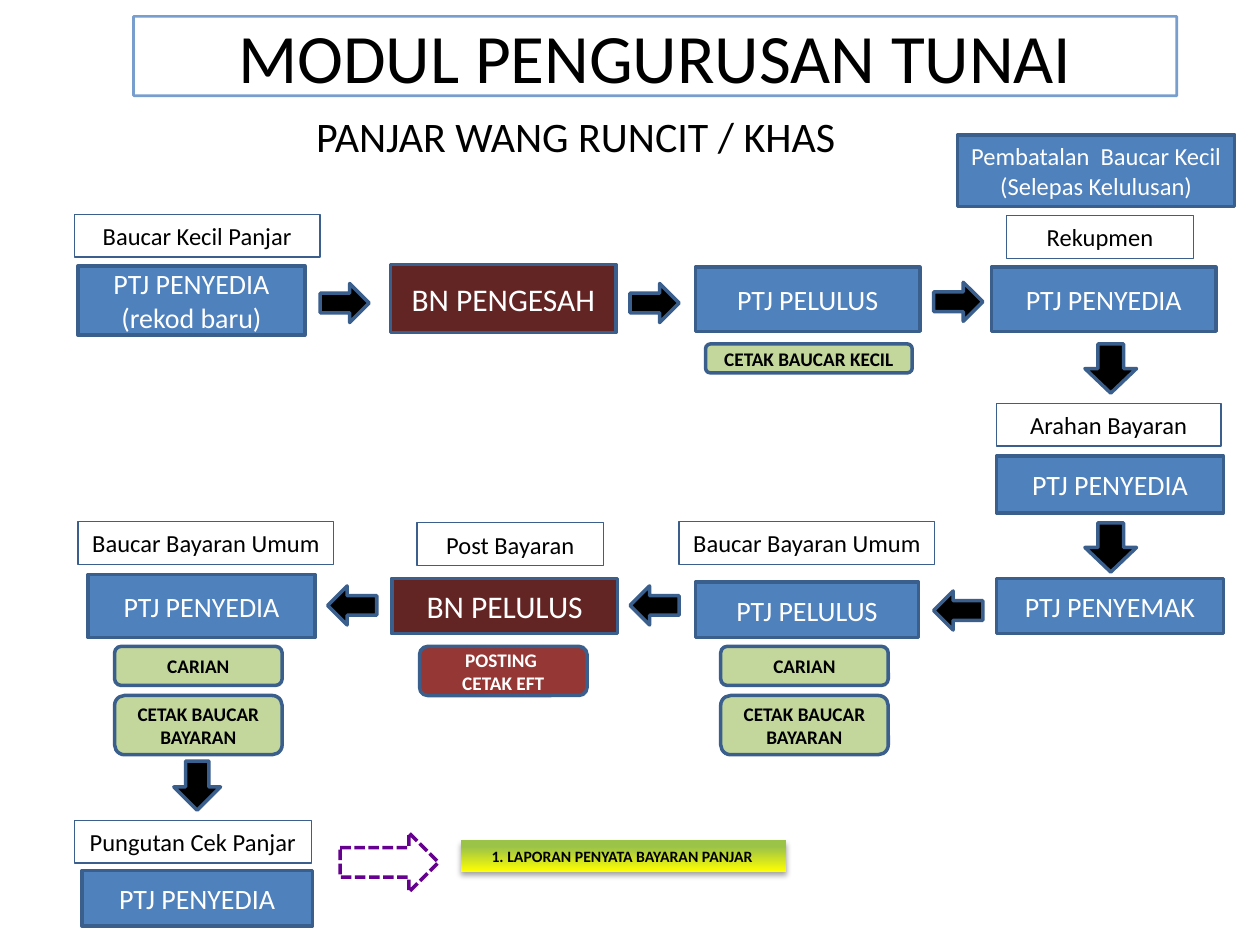
from lxml.etree import SubElement
from pptx import Presentation
from pptx.dml.color import RGBColor
from pptx.enum.dml import MSO_LINE
from pptx.enum.shapes import MSO_SHAPE
from pptx.enum.text import MSO_ANCHOR, MSO_AUTO_SIZE, PP_ALIGN
from pptx.oxml.ns import qn
from pptx.util import Inches, Pt

HUES = {
    "blue": "4F81BD", "edge": "3A5F8C", "wine": "632523", "red": "953735",
    "green": "C3D69B", "black": "000000", "white": "FFFFFF",
    "purple": "66008F", "yellow": "FFFF00", "lime": "9BC348",
}
# style: preset, fill, line width, text size, text colour, bold, wrap
STYLES = {
    "step": (MSO_SHAPE.RECTANGLE, "blue", 2, 16, "white", False, True),
    "bank": (MSO_SHAPE.RECTANGLE, "wine", 2, 18, "white", False, True),
    "cancel": (MSO_SHAPE.RECTANGLE, "blue", 2, 14, "white", False, True),
    "label": (MSO_SHAPE.RECTANGLE, None, 0.75, 14, "black", False, False),
    "task": (MSO_SHAPE.ROUNDED_RECTANGLE, "green", 2, 11, "black", True, True),
    "post": (MSO_SHAPE.ROUNDED_RECTANGLE, "red", 2, 11, "white", True, True),
    "arrow": (MSO_SHAPE.RIGHT_ARROW, "black", 2, 11, "white", False, True),
    "link": (MSO_SHAPE.RIGHT_ARROW, None, 2, 11, "black", False, True),
    "report": (MSO_SHAPE.RECTANGLE, "yellow", 0, 9, "black", True, False),
}


def hue(name):
    return RGBColor.from_string(HUES[name])


def write(shape, text, size, color, bold=False, wrap=True, align=PP_ALIGN.CENTER):
    frame = shape.text_frame
    frame.text = text
    frame.word_wrap = wrap
    frame.auto_size = MSO_AUTO_SIZE.NONE
    frame.vertical_anchor = MSO_ANCHOR.MIDDLE
    for para in frame.paragraphs:
        para.alignment = align
        para.space_before = Pt(0)
        for run in para.runs:
            run.font.name = "Calibri"
            run.font.size = Pt(size)
            run.font.bold = bold
            run.font.color.rgb = hue(color)


deck = Presentation()
deck.slide_width, deck.slide_height = Inches(10), Inches(7.5)
slide = deck.slides.add_slide(deck.slide_layouts[0])

# Title and subtitle
title, sub = slide.placeholders
for holder, box in ((title, (1.06, 0.13, 8.28, 0.63)), (sub, (2.41, 0.83, 4.36, 0.5))):
    holder.left, holder.top, holder.width, holder.height = map(Inches, box)
write(title, "MODUL PENGURUSAN TUNAI", 39.6, "black")
write(sub, "PANJAR WANG RUNCIT / KHAS", 24, "black", wrap=False, align=PP_ALIGN.LEFT)
title.line.color.rgb = hue("blue")
title.line.width = Pt(1.5)
tint = title.line.fill._xPr.find(".//" + qn("a:srgbClr"))
SubElement(tint, qn("a:alpha"), val="76000")

# Flow chart: style, text, left, top, width, height
parts = [
    ("cancel", "Pembatalan  Baucar Kecil (Selepas Kelulusan)", 7.6, 1.07, 2.2, 0.57),
    # Top row
    ("label", "Baucar Kecil Panjar", 0.59, 1.7, 1.95, 0.34),
    ("step", "PTJ PENYEDIA\n(rekod baru)", 0.62, 2.11, 1.8, 0.55),
    ("bank", "BN PENGESAH", 3.1, 2.1, 1.79, 0.54),
    ("step", "PTJ PELULUS", 5.52, 2.12, 1.78, 0.51),
    ("task", "CETAK BAUCAR KECIL", 5.6, 2.73, 1.64, 0.23),
    ("label", "Rekupmen", 7.99, 1.71, 1.48, 0.34),
    ("step", "PTJ PENYEDIA", 7.87, 2.12, 1.78, 0.51),
    # Right column
    ("label", "Arahan Bayaran", 7.91, 3.2, 1.78, 0.34),
    ("step", "PTJ PENYEDIA", 7.91, 3.62, 1.8, 0.45),
    ("step", "PTJ PENYEMAK", 7.91, 4.59, 1.8, 0.44),
    # Middle row
    ("label", "Baucar Bayaran Umum", 5.39, 4.14, 2.03, 0.34),
    ("step", "PTJ PELULUS", 5.52, 4.62, 1.77, 0.44),
    ("label", "Post Bayaran", 3.31, 4.15, 1.48, 0.34),
    ("bank", "BN PELULUS", 3.11, 4.59, 1.79, 0.44),
    ("post", "POSTING \nCETAK EFT", 3.33, 5.13, 1.33, 0.39),
    ("label", "Baucar Bayaran Umum", 0.62, 4.14, 2.03, 0.34),
    ("step", "PTJ PENYEDIA", 0.7, 4.56, 1.8, 0.5),
    # Bottom row
    ("label", "Pungutan Cek Panjar", 0.59, 6.51, 1.88, 0.34),
    ("step", "PTJ PENYEDIA", 0.65, 6.91, 1.83, 0.44),
    ("link", "", 2.7, 6.61, 0.78, 0.47),
    ("report", "1. LAPORAN PENYATA BAYARAN PANJAR ", 3.66, 6.67, 2.58, 0.25),
]
for left in (0.91, 5.72):
    parts.append(("task", "CARIAN", left, 5.13, 1.33, 0.31))
    parts.append(("task", "CETAK BAUCAR BAYARAN", left, 5.52, 1.33, 0.47))

# Arrows: left, top, height, turn
arrows = [
    (2.54, 2.25, 0.31, 0), (5, 2.25, 0.31, 0), (7.41, 2.24, 0.31, 0),
    (8.62, 2.72, 0.41, 90), (8.62, 4.14, 0.41, 90), (7.41, 4.69, 0.31, 180),
    (5, 4.65, 0.31, 180), (2.6, 4.65, 0.31, 180), (1.37, 6.05, 0.37, 90),
]
parts += [("arrow", "", left, top, 0.39, high, turn) for left, top, high, turn in arrows]

for style, text, left, top, wide, high, *turn in parts:
    preset, fill, line, size, color, bold, wrap = STYLES[style]
    shape = slide.shapes.add_shape(preset, *map(Inches, (left, top, wide, high)))
    shape.shadow.inherit = False
    shape.rotation = turn[0] if turn else 0
    if fill:
        shape.fill.solid()
        shape.fill.fore_color.rgb = hue(fill)
    else:
        shape.fill.background()
    if line:
        shape.line.color.rgb = hue("edge")
        shape.line.width = Pt(line)
    else:
        shape.line.fill.background()
    if text:
        write(shape, text, size, color, bold, wrap)
    if style == "link":
        shape.line.color.rgb = hue("purple")
        shape.line.dash_style = MSO_LINE.SQUARE_DOT
    if style == "report":
        shape.fill.gradient()
        shape.fill.gradient_angle = 90
        for stop, name, place in zip(shape.fill.gradient_stops, ("yellow", "lime"), (0, 0.8)):
            stop.color.rgb = hue(name)
            stop.position = place
        glow = shape._element.spPr.find(qn("a:effectLst"))
        shade = SubElement(glow, qn("a:outerShdw"), blurRad=str(Pt(3.1)),
                           dist=str(Pt(1.8)), dir="5400000", rotWithShape="0")
        ink = SubElement(shade, qn("a:srgbClr"), val=HUES["black"])
        SubElement(ink, qn("a:alpha"), val="35000")

deck.save("out.pptx")
